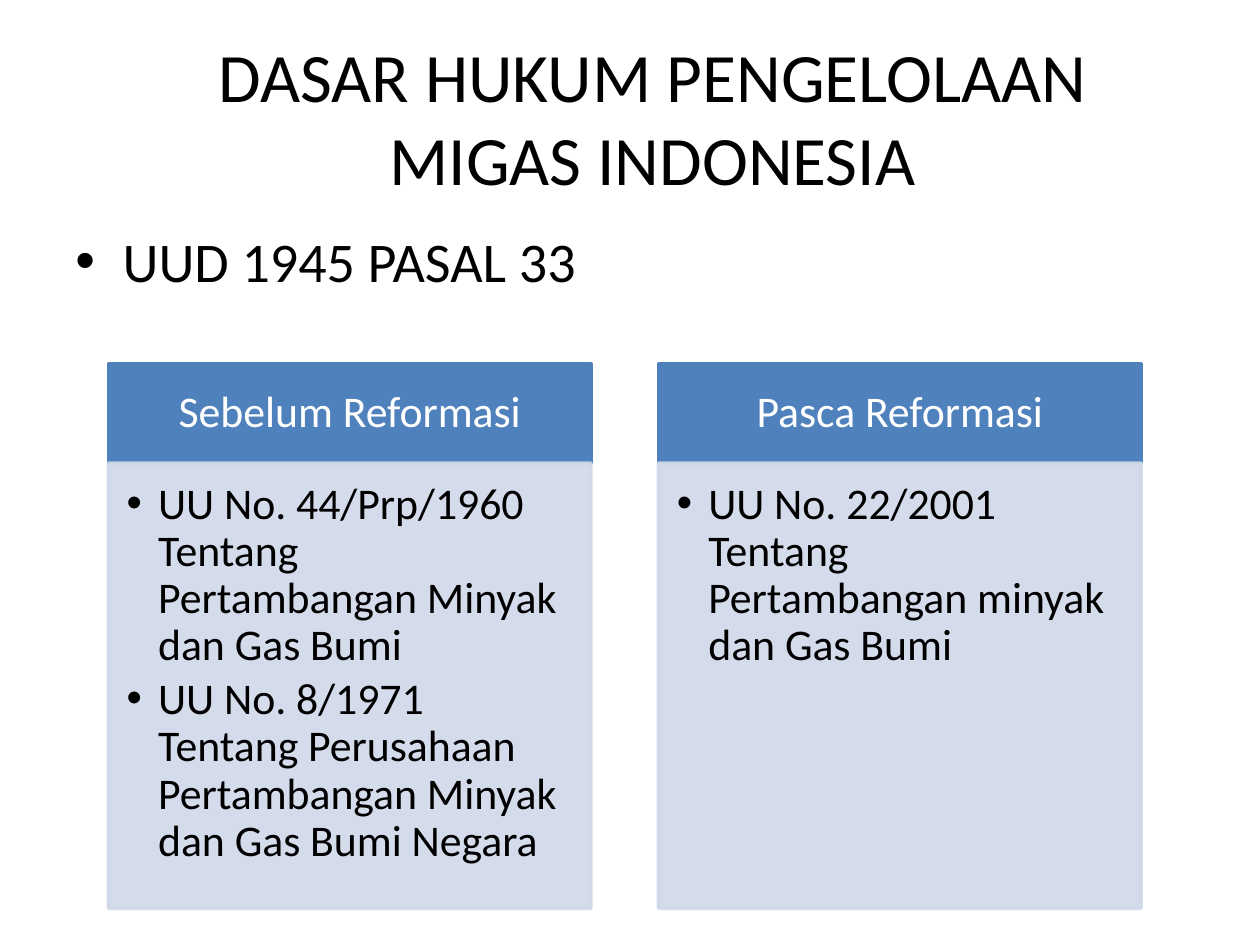
from lxml import etree
from pptx import Presentation
from pptx.dml.color import RGBColor
from pptx.enum.shapes import MSO_SHAPE
from pptx.enum.text import MSO_ANCHOR, MSO_AUTO_SIZE, PP_ALIGN
from pptx.oxml.ns import qn
from pptx.util import Pt

RECTANGLE = MSO_SHAPE.RECTANGLE
TOP, MIDDLE = MSO_ANCHOR.TOP, MSO_ANCHOR.MIDDLE
LEFT, CENTER = PP_ALIGN.LEFT, PP_ALIGN.CENTER
NO_AUTOFIT = MSO_AUTO_SIZE.NONE

BLACK = RGBColor(0x00, 0x00, 0x00)
WHITE = RGBColor(0xFF, 0xFF, 0xFF)
BLUE = RGBColor(0x4F, 0x81, 0xBD)
PALE_BLUE = RGBColor(0xD0, 0xD8, 0xE8)

TITLE_ONLY = 5
COLUMN_LEFT, COLUMN_WIDTH, COLUMN_STEP = 61.9, 275.8, 314.4
HEADER_TOP, HEADER_HEIGHT = 208, 56.6
PANEL_HEIGHT = 254.4

ERAS = [
    ("Sebelum Reformasi", [
        "UU No. 44/Prp/1960 Tentang Pertambangan Minyak dan Gas Bumi",
        "UU No. 8/1971 Tentang Perusahaan Pertambangan Minyak dan Gas Bumi Negara",
    ]),
    ("Pasca Reformasi", [
        "UU No. 22/2001 Tentang Pertambangan minyak dan Gas Bumi",
    ]),
]


class SlideBuilder:
    """Holds the slide and its text style."""

    def __init__(self, slide, font_name="Calibri"):
        self.slide = slide
        self.font_name = font_name

    def fill_text(self, frame, lines, size, color=BLACK, align=LEFT, anchor=TOP,
                  margins=(7.2, 3.6, 7.2, 3.6), indent=0, line_spacing=1.0, space_after=0):
        """Fill a text frame; a positive indent makes the lines bulleted."""
        frame.word_wrap = True
        frame.auto_size = NO_AUTOFIT
        frame.vertical_anchor = anchor
        (frame.margin_left, frame.margin_top,
         frame.margin_right, frame.margin_bottom) = map(Pt, margins)
        frame.text = "\n".join(lines)
        for paragraph in frame.paragraphs:
            if indent:
                self.add_bullet(paragraph, indent)
            paragraph.alignment = align
            paragraph.line_spacing = line_spacing
            paragraph.space_before = Pt(0)
            paragraph.space_after = Pt(space_after)
            font = paragraph.font
            font.name, font.size, font.color.rgb = self.font_name, Pt(size), color

    def add_bullet(self, paragraph, indent):
        properties = paragraph._p.get_or_add_pPr()
        properties.set("marL", str(Pt(indent)))
        properties.set("indent", str(-Pt(indent)))
        etree.SubElement(properties, qn("a:buFont"), typeface="Arial")
        etree.SubElement(properties, qn("a:buChar"), char="•")

    def title(self, text, left, top, width, height):
        title = self.slide.shapes.title
        title.left, title.top, title.width, title.height = map(Pt, (left, top, width, height))
        self.fill_text(title.text_frame, [text], 39.6, align=CENTER, anchor=MIDDLE)

    def bullet_text(self, lines, left, top, width, height):
        box = self.slide.shapes.add_textbox(*map(Pt, (left, top, width, height)))
        self.fill_text(box.text_frame, lines, 32, indent=27)

    def block(self, lines, left, top, width, height, fill, opacity=100, **text_style):
        block = self.slide.shapes.add_shape(RECTANGLE, *map(Pt, (left, top, width, height)))
        block.shadow.inherit = False
        block.fill.solid()
        block.fill.fore_color.rgb = fill
        block.line.color.rgb = fill
        block.line.width = Pt(2)
        if opacity < 100:
            for color in block._element.spPr.iter(qn("a:srgbClr")):
                etree.SubElement(color, qn("a:alpha"), val=str(opacity * 1000))
        self.fill_text(block.text_frame, lines, 25, line_spacing=0.9, **text_style)

    def era_column(self, left, era, laws):
        self.block([era], left, HEADER_TOP, COLUMN_WIDTH, HEADER_HEIGHT, BLUE,
                   color=WHITE, align=CENTER, anchor=MIDDLE, margins=(14, 8, 14, 8))
        self.block(laws, left, HEADER_TOP + HEADER_HEIGHT, COLUMN_WIDTH, PANEL_HEIGHT,
                   PALE_BLUE, opacity=90, margins=(10.5, 10.5, 14, 15.75),
                   indent=18, space_after=3.75)


def main():
    presentation = Presentation()
    presentation.slide_width, presentation.slide_height = Pt(720), Pt(540)
    slide = presentation.slides.add_slide(presentation.slide_layouts[TITLE_ONLY])
    builder = SlideBuilder(slide)
    builder.title("DASAR HUKUM PENGELOLAAN MIGAS INDONESIA", 62, 21.6, 622, 90)
    builder.bullet_text(["UUD 1945 PASAL 33"], 36, 126, 648, 60)
    for index, (era, laws) in enumerate(ERAS):
        builder.era_column(COLUMN_LEFT + index * COLUMN_STEP, era, laws)
    presentation.save("out.pptx")


if __name__ == "__main__":
    main()
